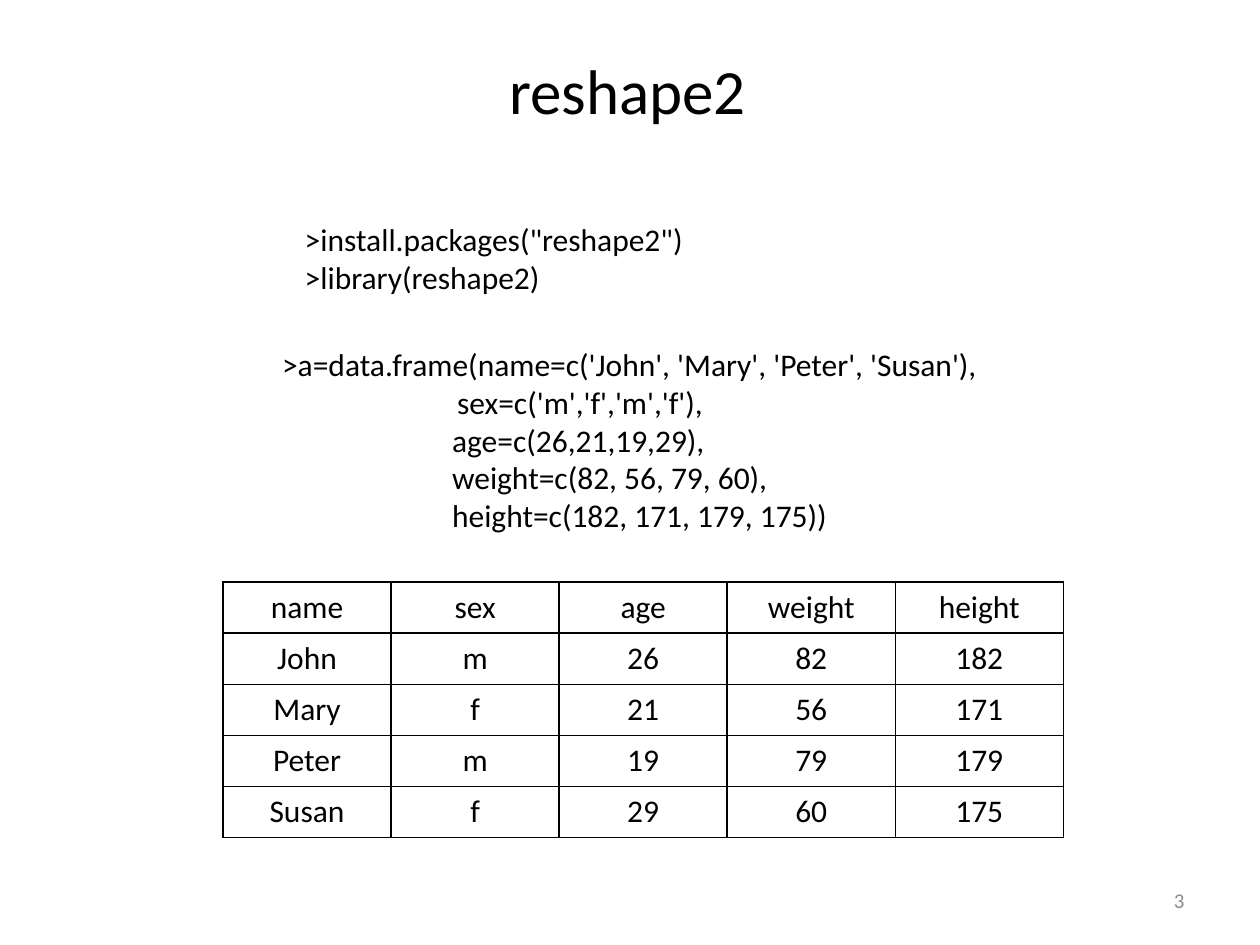
import lxml.etree
import pptx
import pptx.dml.color
import pptx.enum.text
import pptx.oxml.ns
import pptx.util

BLACK = pptx.dml.color.RGBColor(0x00, 0x00, 0x00)
WHITE = pptx.dml.color.RGBColor(0xFF, 0xFF, 0xFF)
GRAY = pptx.dml.color.RGBColor(0x8C, 0x8C, 0x8C)
FONT = "Calibri"
BODY_SIZE = 18
ALIGN = pptx.enum.text.PP_ALIGN
ANCHOR = pptx.enum.text.MSO_ANCHOR
SLIDE_WIDTH = pptx.util.Inches(10)
SLIDE_HEIGHT = pptx.util.Inches(7.5)
FIRST_ARGUMENT_INDENT = pptx.util.Inches(1.39)
ARGUMENT_INDENT = pptx.util.Inches(1.35)
BORDER_WIDTH = pptx.util.Pt(1)

INSTALL_LINES = [
    ('>install.packages("reshape2")', 0),
    (">library(reshape2)", 0),
]
DATA_FRAME_LINES = [
    (">a=data.frame(name=c('John', 'Mary', 'Peter', 'Susan'),", 0),
    ("sex=c('m','f','m','f'),", FIRST_ARGUMENT_INDENT),
    ("age=c(26,21,19,29),", ARGUMENT_INDENT),
    ("weight=c(82, 56, 79, 60),", ARGUMENT_INDENT),
    ("height=c(182, 171, 179, 175))", ARGUMENT_INDENT),
]
PEOPLE = [
    ("name", "sex", "age", "weight", "height"),
    ("John", "m", 26, 82, 182),
    ("Mary", "f", 21, 56, 171),
    ("Peter", "m", 19, 79, 179),
    ("Susan", "f", 29, 60, 175),
]


def percent_box(left, top, width, height):
    return (
        int(left * SLIDE_WIDTH / 100),
        int(top * SLIDE_HEIGHT / 100),
        int(width * SLIDE_WIDTH / 100),
        int(height * SLIDE_HEIGHT / 100),
    )


def format_text(text_frame, size=BODY_SIZE, color=BLACK, alignment=ALIGN.LEFT):
    for paragraph in text_frame.paragraphs:
        paragraph.alignment = alignment
        for run in paragraph.runs:
            run.font.name = FONT
            run.font.size = pptx.util.Pt(size)
            run.font.bold = False
            run.font.color.rgb = color


def add_title(slide, box, text):
    title = slide.shapes.title
    title.left, title.top, title.width, title.height = box
    title.text_frame.text = text
    title.text_frame.vertical_anchor = ANCHOR.TOP
    format_text(title.text_frame, 36, alignment=ALIGN.CENTER)


def add_code(slide, box, lines):
    text_frame = slide.shapes.add_textbox(*box).text_frame
    text_frame.word_wrap = True
    text_frame.text = "\n".join(text for text, indent in lines)
    format_text(text_frame)
    for paragraph, (text, indent) in zip(text_frame.paragraphs, lines):
        paragraph._p.get_or_add_pPr().set("marL", str(indent))


def add_borders(cell):
    qualified = pptx.oxml.ns.qn
    properties = cell._tc.get_or_add_tcPr()
    for position, side in enumerate(("a:lnL", "a:lnR", "a:lnT", "a:lnB")):
        line = lxml.etree.Element(qualified(side), w=str(BORDER_WIDTH))
        fill = lxml.etree.SubElement(line, qualified("a:solidFill"))
        lxml.etree.SubElement(fill, qualified("a:srgbClr"), val=str(BLACK))
        properties.insert(position, line)


def add_people_table(slide, box, rows):
    table = slide.shapes.add_table(len(rows), len(rows[0]), *box).table
    table.first_row = False
    table.horz_banding = False
    for row_index, row in enumerate(rows):
        for column_index, value in enumerate(row):
            cell = table.cell(row_index, column_index)
            cell.text_frame.text = str(value)
            cell.fill.solid()
            cell.fill.fore_color.rgb = WHITE
            format_text(cell.text_frame, alignment=ALIGN.CENTER)
            add_borders(cell)


def add_page_number(slide, box, number):
    text_frame = slide.shapes.add_textbox(*box).text_frame
    text_frame.word_wrap = True
    text_frame.vertical_anchor = ANCHOR.MIDDLE
    text_frame.text = str(number)
    format_text(text_frame, 12, GRAY, ALIGN.RIGHT)


def main():
    presentation = pptx.Presentation()
    presentation.slide_width = SLIDE_WIDTH
    presentation.slide_height = SLIDE_HEIGHT
    slide = presentation.slides.add_slide(presentation.slide_layouts[5])
    add_title(slide, percent_box(0, 4.75, 99.6, 9.45), "reshape2")
    add_code(slide, percent_box(23.2, 22.65, 50, 9.45), INSTALL_LINES)
    add_code(slide, percent_box(21.4, 35.85, 57.7, 21.6), DATA_FRAME_LINES)
    add_people_table(slide, percent_box(17.7, 61.6, 66.7, 27.05), PEOPLE)
    add_page_number(slide, percent_box(71.7, 92.65, 23.3, 5.3), 3)
    presentation.save("out.pptx")


if __name__ == "__main__":
    main()
